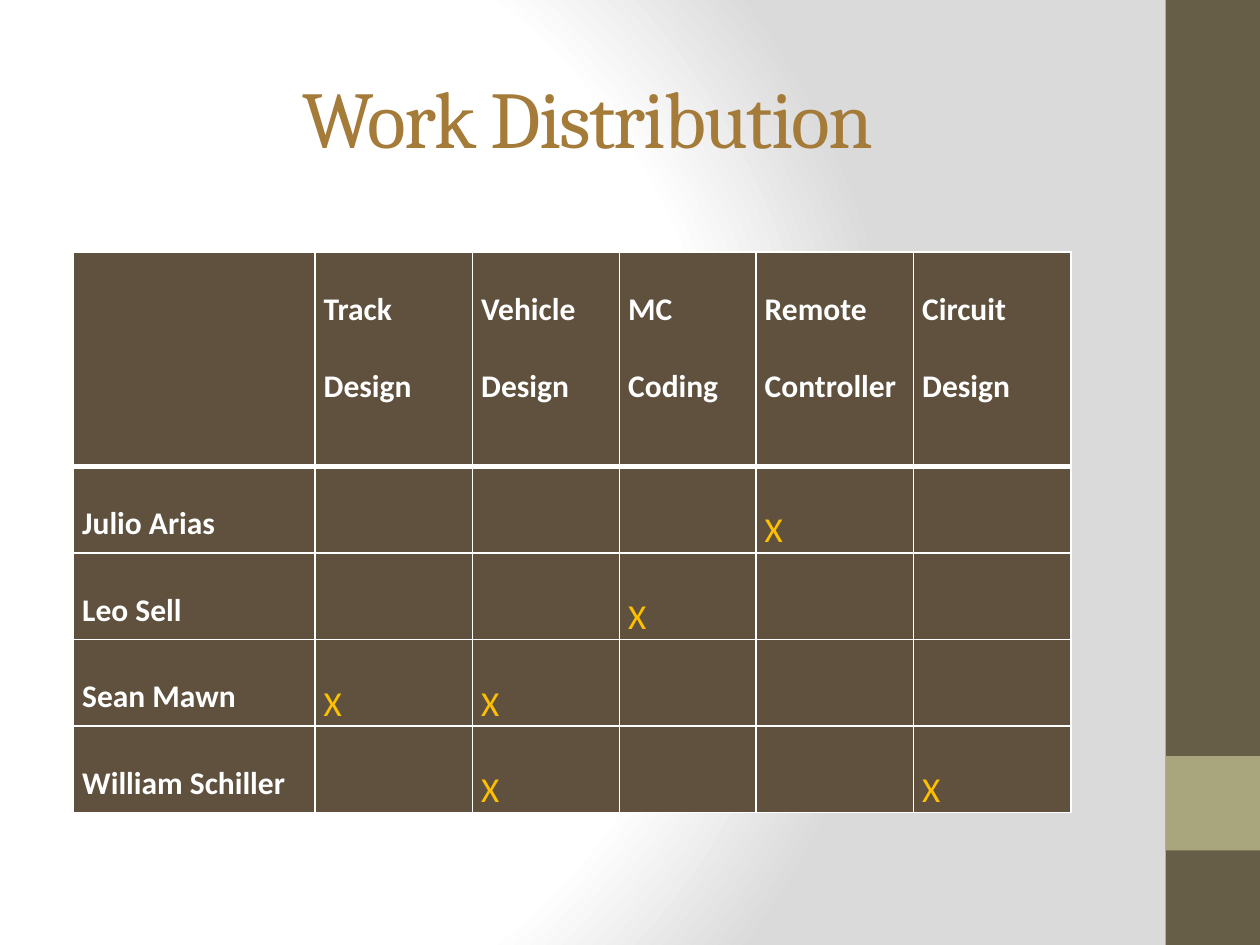
from dataclasses import dataclass

from lxml import etree
from pptx import Presentation
from pptx.dml.color import RGBColor
from pptx.enum import shapes, text
from pptx.oxml import ns
from pptx.util import Pt


@dataclass(frozen=True)
class Theme:
    olive: str = "675E47"
    sage: str = "A9A57C"
    gold: str = "A47B38"
    brown: str = "5F513E"
    amber: str = "FFC000"
    white: str = "FFFFFF"
    grey: str = "DADADA"
    title_font: str = "Cambria"
    body_font: str = "Calibri"
    title_size: int = 46
    label_size: int = 18
    mark_size: int = 20


THEME = Theme()

TASKS = ["Track Design", "Vehicle Design", "MC Coding", "Remote Controller", "Circuit Design"]
ASSIGNMENTS = {
    "Julio Arias": ["Remote Controller"],
    "Leo Sell": ["MC Coding"],
    "Sean Mawn": ["Track Design", "Vehicle Design"],
    "William Schiller": ["Vehicle Design", "Circuit Design"],
}
COLUMN_WIDTHS = [138, 90, 84, 78, 90, 90]
HEADER_HEIGHT = 122.4


def add_element(parent, tag, **attributes):
    return etree.SubElement(parent, ns.qn(tag), attributes)


def add_run(paragraph, words, font, size, color, bold=False):
    run = paragraph.add_run()
    run.text = words
    run.font.name = font
    run.font.size = Pt(size)
    run.font.bold = bold
    run.font.color.rgb = RGBColor.from_string(color)
    return run


def paint_background(slide):
    """Radial fade from white to grey."""
    slide.background.fill.gradient()
    gradient = next(slide.element.iter(ns.qn("a:gradFill")))
    for child in list(gradient):
        gradient.remove(child)
    stops = add_element(gradient, "a:gsLst")
    for position, color in [(0, THEME.white), (75, THEME.white), (100, THEME.grey)]:
        stop = add_element(stops, "a:gs", pos=str(position * 1000))
        add_element(stop, "a:srgbClr", val=color)
    circle = add_element(gradient, "a:path", path="circle")
    add_element(circle, "a:fillToRect", l="20000", t="50000", r="100000", b="50000")


def add_sidebar(slide, left, top, width, height):
    """Full-height band with a square accent."""
    accent_top = top + height * 0.8
    for y, band_height, color in [(top, height, THEME.olive), (accent_top, width, THEME.sage)]:
        band = slide.shapes.add_shape(
            shapes.MSO_SHAPE.RECTANGLE, Pt(left), Pt(y), Pt(width), Pt(band_height))
        band.shadow.inherit = False
        band.fill.solid()
        band.fill.fore_color.rgb = RGBColor.from_string(color)
        band.line.fill.background()


def add_title(slide, left, top, width, height):
    frame = slide.shapes.add_textbox(Pt(left), Pt(top), Pt(width), Pt(height)).text_frame
    frame.word_wrap = True
    frame.vertical_anchor = text.MSO_ANCHOR.MIDDLE
    paragraph = frame.paragraphs[0]
    paragraph.alignment = text.PP_ALIGN.CENTER
    run = add_run(paragraph, "Work Distribution", THEME.title_font, THEME.title_size, THEME.gold)
    run.font._element.set("spc", "-100")


def set_borders(cell, top, bottom):
    properties = cell._tc.get_or_add_tcPr()
    sides = [("a:lnL", 1), ("a:lnR", 1), ("a:lnT", top), ("a:lnB", bottom)]
    for index, (tag, weight) in enumerate(sides):
        line = add_element(properties, tag, w=str(Pt(weight)))
        add_element(add_element(line, "a:solidFill"), "a:srgbClr", val=THEME.white)
        properties.insert(index, line)


def fill_cell(cell, words, is_mark):
    cell.margin_left = cell.margin_right = Pt(5)
    cell.margin_top = cell.margin_bottom = Pt(0)
    paragraph = cell.text_frame.paragraphs[0]
    paragraph.line_spacing = 2.0
    if is_mark:
        cell.vertical_anchor = text.MSO_ANCHOR.MIDDLE
        add_run(paragraph, words, THEME.body_font, THEME.mark_size, THEME.amber)
    else:
        add_run(paragraph, words, THEME.body_font, THEME.label_size, THEME.white, bold=True)


def add_work_table(slide, left, top, width, height):
    """One row per person, with an X under each task they own."""
    rows = [[""] + TASKS]
    for person, owned in ASSIGNMENTS.items():
        rows.append([person] + ["X" if task in owned else "" for task in TASKS])

    table = slide.shapes.add_table(
        len(rows), len(rows[0]), Pt(left), Pt(top), Pt(width), Pt(height)).table
    for column, column_width in zip(table.columns, COLUMN_WIDTHS):
        column.width = Pt(column_width)
    person_height = (height - HEADER_HEIGHT) / len(ASSIGNMENTS)
    for r, values in enumerate(rows):
        table.rows[r].height = Pt(person_height if r else HEADER_HEIGHT)
        for c, words in enumerate(values):
            cell = table.cell(r, c)
            cell.fill.solid()
            cell.fill.fore_color.rgb = RGBColor.from_string(THEME.brown)
            set_borders(cell, top=3 if r == 1 else 1, bottom=3 if r == 0 else 1)
            if words:
                fill_cell(cell, words, is_mark=r > 0 and c > 0)


def main():
    presentation = Presentation()
    presentation.slide_width, presentation.slide_height = Pt(720), Pt(540)
    slide = presentation.slides.add_slide(presentation.slide_layouts[6])
    paint_background(slide)
    add_sidebar(slide, 666, 0, 54, 540)
    add_title(slide, 36, 21.6, 600, 90)
    add_work_table(slide, 42, 144, sum(COLUMN_WIDTHS), 320.4)
    presentation.save("out.pptx")


if __name__ == "__main__":
    main()
